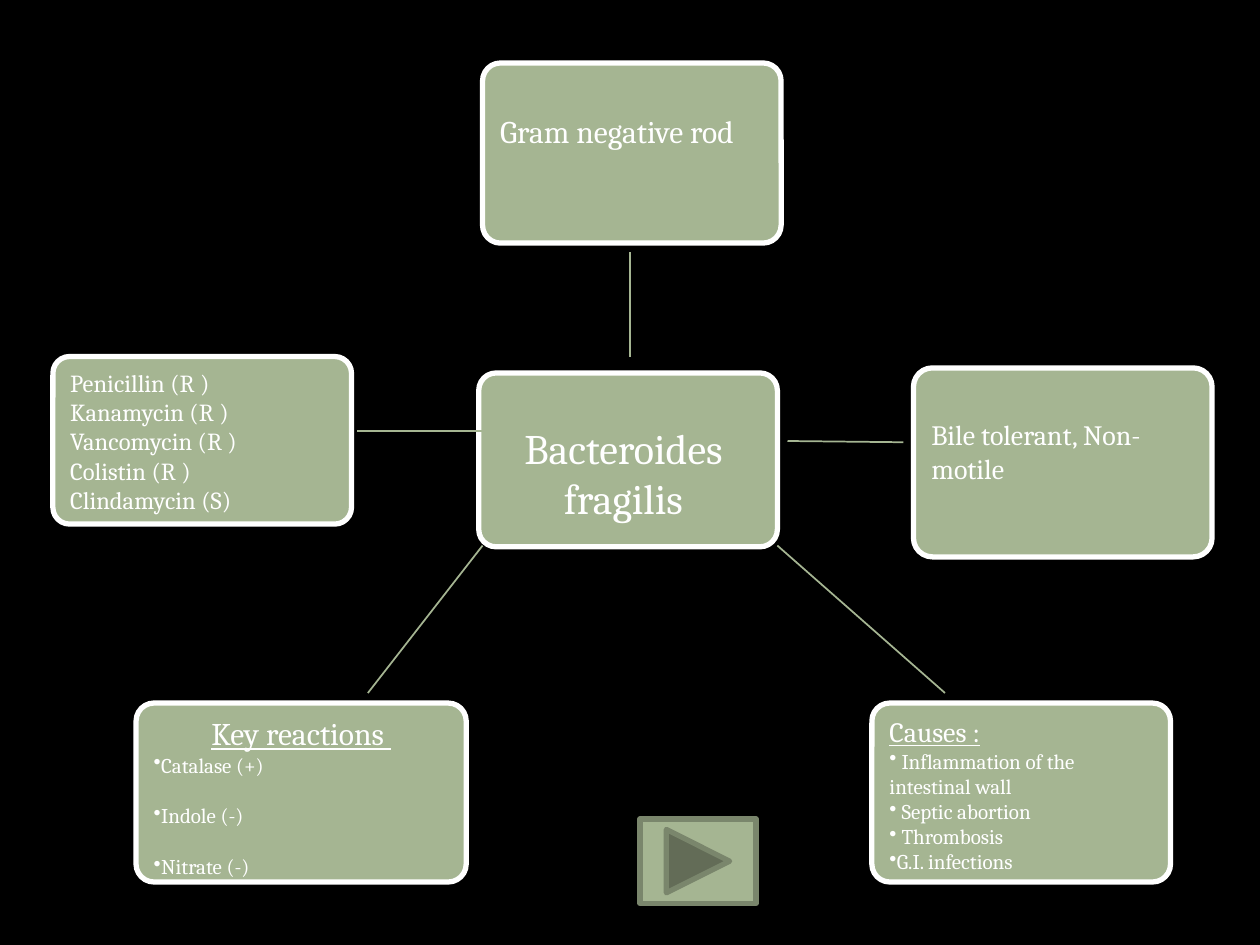
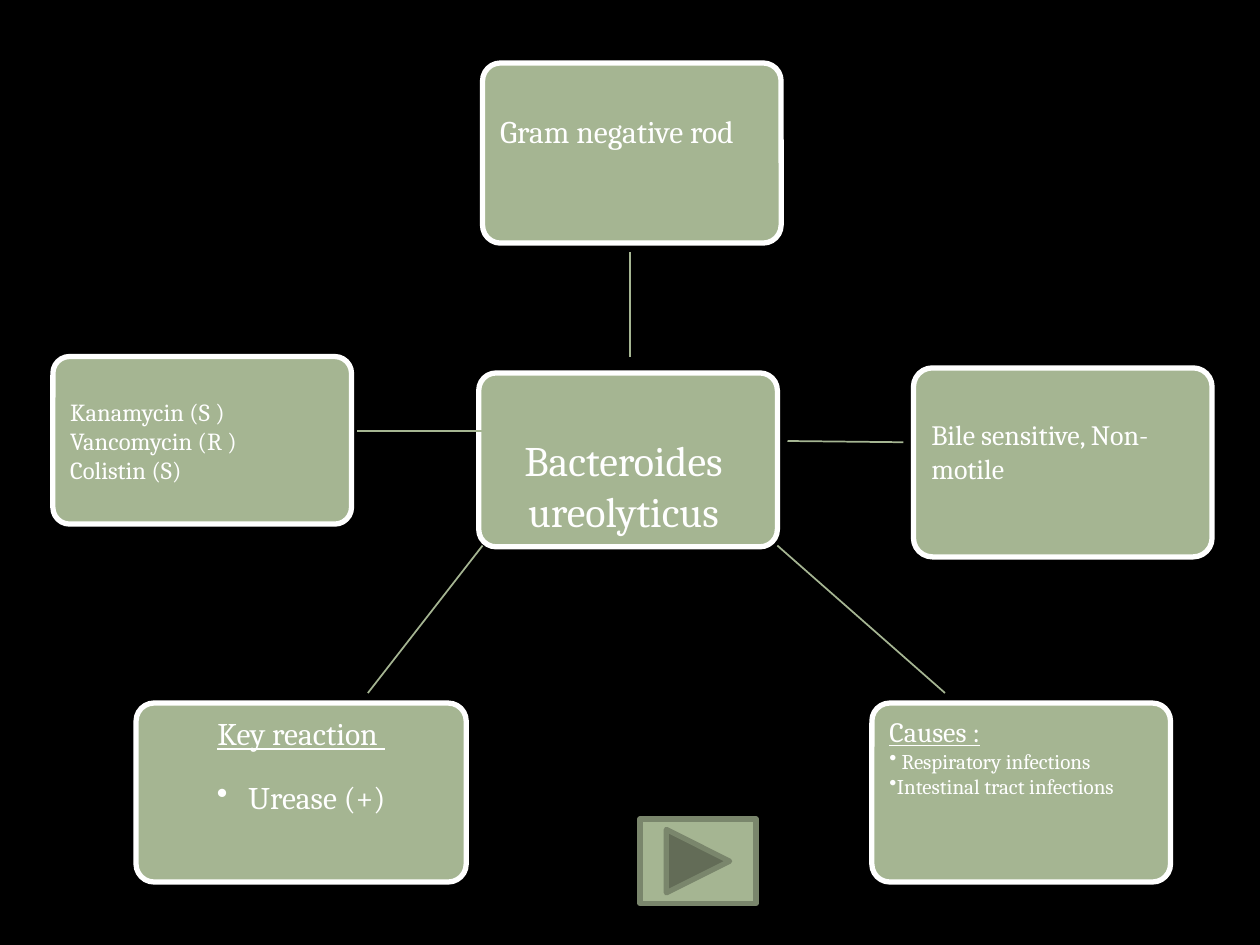
from dataclasses import dataclass
from lxml.etree import SubElement
from pptx import Presentation
from pptx.dml.color import RGBColor
from pptx.enum.shapes import MSO_CONNECTOR, MSO_SHAPE
from pptx.enum.text import MSO_ANCHOR, PP_ALIGN
from pptx.oxml.ns import qn
from pptx.util import Inches, Pt


@dataclass(frozen=True)
class Theme:
    """Colours, type sizes and line widths of the deck."""
    back: RGBColor = RGBColor(0x00, 0x00, 0x00)
    sage: RGBColor = RGBColor(0xA5, 0xB5, 0x92)
    moss: RGBColor = RGBColor(0x7A, 0x86, 0x6C)
    white: RGBColor = RGBColor(0xFF, 0xFF, 0xFF)
    font: str = "Cambria"
    hub: int = 24
    head: int = 18
    note: int = 16
    drug: int = 14
    item: int = 12
    edge: float = 3
    link: float = 1


@dataclass(frozen=True)
class Line:
    """One paragraph of a card."""
    text: str
    size: int
    mid: bool = False
    under: bool = False
    dot: bool = False
    hang: float = 0
    gap: float = 0


@dataclass(frozen=True)
class Germ:
    """What one slide tells about a species."""
    name: list
    tests: list
    traits: str
    harms: list
    drugs: list
    drop: float
    lead: float


THEME = Theme()
CARDS = {
    "name": (3.8, 2.96, 2.37, 1.38),
    "tests": (1.08, 5.58, 2.62, 1.42),
    "traits": (7.25, 2.92, 2.37, 1.5),
    "harms": (6.92, 5.58, 2.37, 1.42),
    "stain": (3.83, 0.5, 2.37, 1.43),
    "drugs": (0.42, 2.83, 2.37, 1.33),
}
LINKS = [
    (3.83, 3.42, 2.83, 3.42),
    (5, 2, 5, 2.83),
    (7.17, 3.51, 6.25, 3.5),
    (3.83, 4.33, 2.92, 5.5),
    (6.17, 4.33, 7.5, 5.5),
]
NEXT = (5.08, 6.5, 0.92, 0.67)
BLANK = 14.5


def add_shape(slide, kind, box, edge):
    """Draw a sage shape with a coloured edge in the box."""
    shape = slide.shapes.add_shape(kind, *map(Inches, box))
    shape.shadow.inherit = False
    shape.fill.solid()
    shape.fill.fore_color.rgb = THEME.sage
    shape.line.color.rgb = edge
    shape.line.width = Pt(THEME.edge)
    return shape


def add_line(para, line):
    """Write one line of a card into a paragraph."""
    para.text = line.text
    para.alignment = PP_ALIGN.CENTER if line.mid else PP_ALIGN.LEFT
    para.space_before = Pt(line.gap)
    if line.dot:
        props = para._p.get_or_add_pPr()
        props.set("marL", str(Inches(line.hang)))
        props.set("indent", str(-Inches(line.hang)))
        SubElement(props, qn("a:buChar")).set("char", "•")
    font = para.font
    font.name = THEME.font
    font.size = Pt(line.size)
    font.color.rgb = THEME.white
    font.underline = line.under


def add_card(slide, box, lines, lead=0):
    """Draw a rounded card whose text starts below a lead."""
    card = add_shape(slide, MSO_SHAPE.ROUNDED_RECTANGLE, box, THEME.white)
    card.adjustments[0] = 0.1
    frame = card.text_frame
    frame.word_wrap = True
    frame.vertical_anchor = MSO_ANCHOR.TOP
    frame.margin_top = Inches(0.05 + lead)
    for index, line in enumerate(lines):
        add_line(frame.add_paragraph() if index else frame.paragraphs[0], line)


def add_link(slide, ends):
    """Draw a thin line between two points."""
    link = slide.shapes.add_connector(MSO_CONNECTOR.STRAIGHT, *map(Inches, ends))
    link.line.color.rgb = THEME.sage
    link.line.width = Pt(THEME.link)
    SubElement(link._element.spPr, qn("a:effectLst"))


def add_map(deck, germ):
    """Add a slide with the species in the middle and facts around it."""
    slide = deck.slides.add_slide(deck.slide_layouts[6])
    slide.background.fill.solid()
    slide.background.fill.fore_color.rgb = THEME.back
    name = [Line(word, THEME.hub, mid=True) for word in germ.name]
    harms = [Line("Causes :", THEME.note, under=True)]
    harms += [Line(harm, THEME.item, dot=True) for harm in germ.harms]
    drugs = [Line(drug, THEME.drug) for drug in germ.drugs]
    add_card(slide, CARDS["name"], name, germ.drop)
    add_card(slide, CARDS["tests"], germ.tests)
    add_card(slide, CARDS["traits"], [Line(germ.traits, THEME.note)], 0.3)
    add_card(slide, CARDS["harms"], harms)
    add_card(slide, CARDS["stain"], [Line("Gram negative rod", THEME.head)], 0.3)
    add_card(slide, CARDS["drugs"], drugs, germ.lead)
    for ends in LINKS:
        add_link(slide, ends)
    add_shape(slide, MSO_SHAPE.ACTION_BUTTON_FORWARD_OR_NEXT, NEXT, THEME.moss)


GERMS = [
    Germ(
        name=["Bacteroides ", "fragilis "],
        tests=[
            Line("Key reactions ", THEME.head, mid=True, under=True),
            Line("Catalase (+)", THEME.item, dot=True),
            Line("Indole (-)", THEME.item, dot=True, gap=BLANK),
            Line("Nitrate (-)", THEME.item, dot=True, gap=BLANK),
        ],
        traits="Bile tolerant, Non-motile",
        harms=[" Inflammation of the intestinal wall", " Septic abortion",
               " Thrombosis", "G.I. infections"],
        drugs=["Penicillin (R )", "Kanamycin (R )", "Vancomycin (R )",
               "Colistin (R )", "Clindamycin (S)"],
        drop=0.3,
        lead=0,
    ),
    Germ(
        name=["Bacteroides ", "ureolyticus "],
        tests=[
            Line("Key reaction ", THEME.head, mid=True, under=True),
            Line("Urease (+)", THEME.head, mid=True, dot=True, hang=0.25, gap=BLANK),
        ],
        traits="Bile sensitive, Non-motile",
        harms=[" Respiratory infections", "Intestinal tract infections"],
        drugs=["Kanamycin (S )", "Vancomycin (R )", "Colistin (S)"],
        drop=0.4,
        lead=0.23,
    ),
]


def main():
    """Build and save the deck."""
    deck = Presentation()
    deck.slide_width, deck.slide_height = Inches(10), Inches(7.5)
    for germ in GERMS:
        add_map(deck, germ)
    deck.save("out.pptx")


if __name__ == "__main__":
    main()
